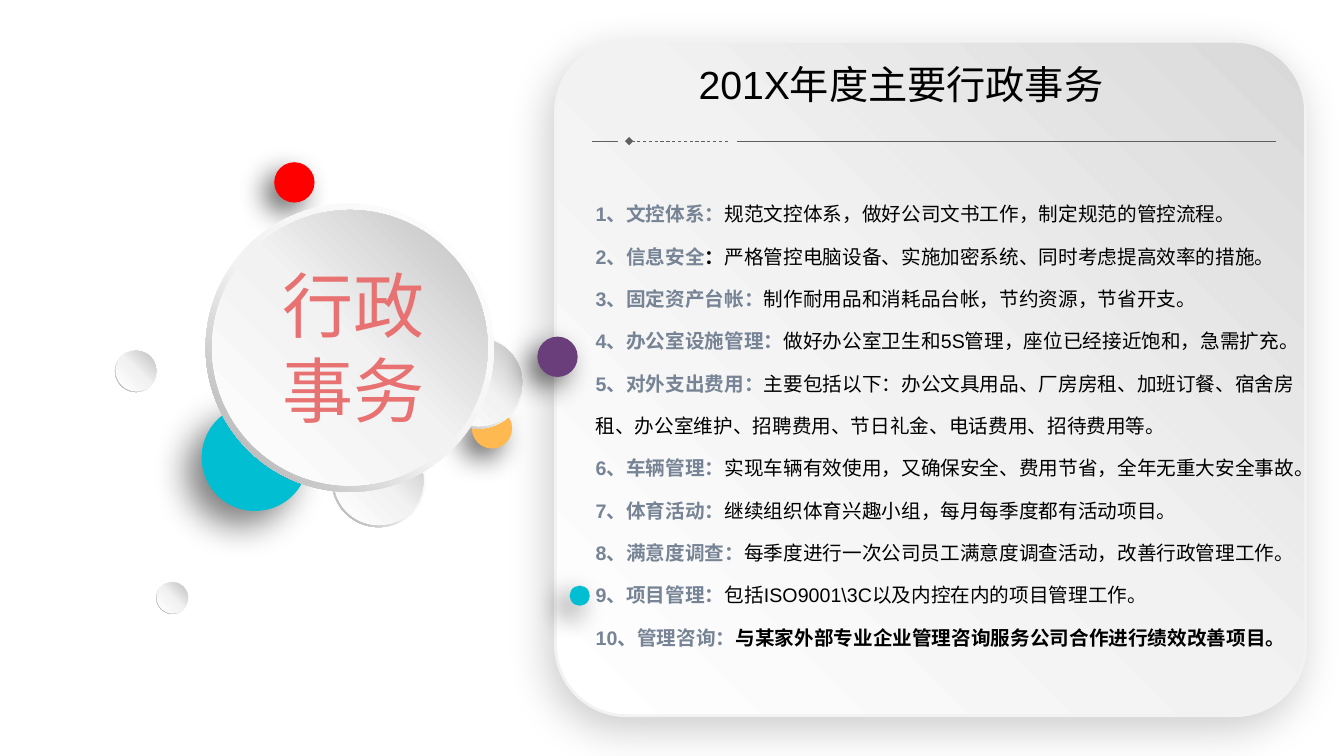
import pptx
import pptx.util
import pptx.dml.color
import pptx.enum.dml
import pptx.enum.shapes
import pptx.enum.text
import pptx.oxml
import pptx.oxml.ns

WIDE, HIGH = 13.33, 7.5
CELL = HIGH / 90
FONT = "Arial"
SLATE, BLACK, GREY = "778495", "000000", "5F5F5F"
TEAL, AMBER, PLUM, RED = "01BED2", "FFB950", "693E7A", "FF0000"
FACE = [(0, "FFFFFF"), (51, "F2F2F2"), (100, "BFBFBF")]
PANEL = [(0, "FFFFFF"), (51, "F2F2F2"), (100, "D9D9D9")]
RIM = [(0, "FFFFFF"), (55, "F2F2F2"), (100, "A6A6A6")]
SMALL = (60, 20, 10, 135)
LARGE = (50, 25, 15, 135)
SOFT = (20, 30, 10, 120)
KIND = pptx.enum.shapes.MSO_SHAPE

DUTIES = [
    ("1、文控体系：", "", "规范文控体系，做好公司文书工作，制定规范的管控流程。"),
    ("2、信息安全", "：", "严格管控电脑设备、实施加密系统、同时考虑提高效率的措施。"),
    ("3、固定资产台帐：", "", "制作耐用品和消耗品台帐，节约资源，节省开支。"),
    ("4、办公室设施管理：", "", "做好办公室卫生和5S管理，座位已经接近饱和，急需扩充。"),
    ("5、对外支出费用：", "", "主要包括以下：办公文具用品、厂房房租、加班订餐、宿舍房租、"
     "办公室维护、招聘费用、节日礼金、电话费用、招待费用等。"),
    ("6、车辆管理：", "", "实现车辆有效使用，又确保安全、费用节省，全年无重大安全事故。"),
    ("7、体育活动：", "", "继续组织体育兴趣小组，每月每季度都有活动项目。"),
    ("8、满意度调查：", "", "每季度进行一次公司员工满意度调查活动，改善行政管理工作。"),
    ("9、项目管理：", "", "包括ISO9001\\3C以及内控在内的项目管理工作。"),
    ("10、管理咨询：", "与某家外部专业企业管理咨询服务公司合作进行绩效改善项目。", ""),
]


def grid(*cells):
    return [pptx.util.Inches(cell * CELL) for cell in cells]


def color(code):
    return pptx.dml.color.RGBColor.from_string(code)


def node(xml):
    space = pptx.oxml.ns.nsdecls("a")
    return pptx.oxml.parse_xml(xml.replace(">", f" {space}>", 1))


def blend(shape, stops, angle):
    marks = "".join(
        f'<a:gs pos="{at * 1000}"><a:srgbClr val="{code}"/></a:gs>' for at, code in stops)
    fill = node(f'<a:gradFill rotWithShape="1"><a:gsLst>{marks}</a:gsLst>'
                f'<a:lin ang="{angle * 60000}" scaled="0"/></a:gradFill>')
    shape._element.spPr.find(pptx.oxml.ns.qn("a:prstGeom")).addnext(fill)


def shade(shape, alpha, blur, dist, angle):
    glow = node(
        '<a:effectLst>'
        f'<a:outerShdw blurRad="{blur * 12700}" dist="{dist * 12700}" '
        f'dir="{angle * 60000}" algn="ctr" rotWithShape="0">'
        f'<a:srgbClr val="000000"><a:alpha val="{alpha * 1000}"/></a:srgbClr>'
        '</a:outerShdw></a:effectLst>')
    holder = shape._element.spPr
    holder.replace(holder.find(pptx.oxml.ns.qn("a:effectLst")), glow)


def solid(home, kind, box, adjust=None):
    shape = home.add_shape(kind, *grid(*box))
    shape.shadow.inherit = False
    shape.line.fill.background()
    if adjust is not None:
        shape.adjustments[0] = adjust
    return shape


def panel(home, box):
    shape = solid(home, KIND.ROUNDED_RECTANGLE, box, 0.105)
    blend(shape, PANEL, 315)
    shape.line.color.rgb = color("F2F2F2")
    shape.line.width = pptx.util.Pt(2)
    shade(shape, *SOFT)


def dot(home, left, top, size, code, shadow=SMALL):
    shape = solid(home, KIND.OVAL, (left, top, size, size))
    shape.fill.solid()
    shape.fill.fore_color.rgb = color(code)
    shade(shape, *shadow)


def ball(home, left, top, size):
    group = home.add_group_shape().shapes
    blend(solid(group, KIND.DONUT, (left, top, size, size), 0.049), RIM, 135)
    inset = size * 0.022
    core = size - 2 * inset
    blend(solid(group, KIND.OVAL, (left + inset, top + inset, core, core)), FACE, 315)


def rule(home, start, end, row, dash=False):
    ends = grid(start, row, end, row)
    line = home.add_connector(pptx.enum.shapes.MSO_CONNECTOR.STRAIGHT, *ends)
    line.line.color.rgb = color(GREY)
    line.line.width = pptx.util.Pt(0.6)
    if dash:
        line.line.dash_style = pptx.enum.dml.MSO_LINE.DASH
        line.line._get_or_add_ln().append(node('<a:tailEnd type="diamond"></a:tailEnd>'))
    line._element.spPr.append(node("<a:effectLst></a:effectLst>"))


def write(para, text, size=14, code=BLACK, bold=False):
    run = para.add_run()
    run.text = text
    run.font.name = FONT
    run.font.size = pptx.util.Pt(size)
    run.font.bold = bold
    run.font.color.rgb = color(code)
    run.font._element.append(node(f'<a:ea typeface="{FONT}"></a:ea>'))


def frame(home, box, grow=True):
    text = home.add_textbox(*grid(*box)).text_frame
    text.word_wrap = True
    if grow:
        text.auto_size = pptx.enum.text.MSO_AUTO_SIZE.SHAPE_TO_FIT_TEXT
    else:
        text.vertical_anchor = pptx.enum.text.MSO_ANCHOR.MIDDLE
    return text


def duties(home, box):
    text = frame(home, box)
    for index, (head, strong, plain) in enumerate(DUTIES):
        para = text.add_paragraph() if index else text.paragraphs[0]
        para.line_spacing = 1.8
        para._p.get_or_add_pPr().set("hangingPunct", "1")
        write(para, head, code=SLATE, bold=True)
        if strong:
            write(para, strong, bold=True)
        if plain:
            write(para, plain)


def main():
    deck = pptx.Presentation()
    deck.slide_width = pptx.util.Inches(WIDE)
    deck.slide_height = pptx.util.Inches(HIGH)
    home = deck.slides.add_slide(deck.slide_layouts[6]).shapes

    panel(home, (66.12, 4.92, 89.28, 80.28))
    dot(home, 24, 48.12, 12.72, TEAL, LARGE)
    dot(home, 56.16, 48.6, 4.8, AMBER)
    ball(home, 51.48, 40.08, 10.92)
    ball(home, 18.6, 69.24, 3.84)
    ball(home, 13.68, 41.64, 5.04)
    dot(home, 63.96, 40.08, 4.8, PLUM)
    dot(home, 67.8, 69.72, 2.4, TEAL)
    ball(home, 39.48, 51.6, 11.16)
    dot(home, 32.64, 19.32, 4.8, RED)
    ball(home, 24.48, 24.24, 34.32)

    rule(home, 151.92, 87.72, 16.8)
    rule(home, 86.64, 74.88, 16.8, dash=True)
    rule(home, 73.56, 70.44, 16.8)

    topic = frame(home, (32.4, 30.48, 21.96, 21.72))
    write(topic.paragraphs[0], "行政事务", size=50.7, code="E87171")
    title = frame(home, (81.96, 8.16, 69.96, 4.44), grow=False).paragraphs[0]
    title.line_spacing = 0.9
    write(title, "201X年度主要行政事务", size=28)
    duties(home, (69.72, 21.24, 87, 57.24))
    deck.save("out.pptx")


if __name__ == "__main__":
    main()
